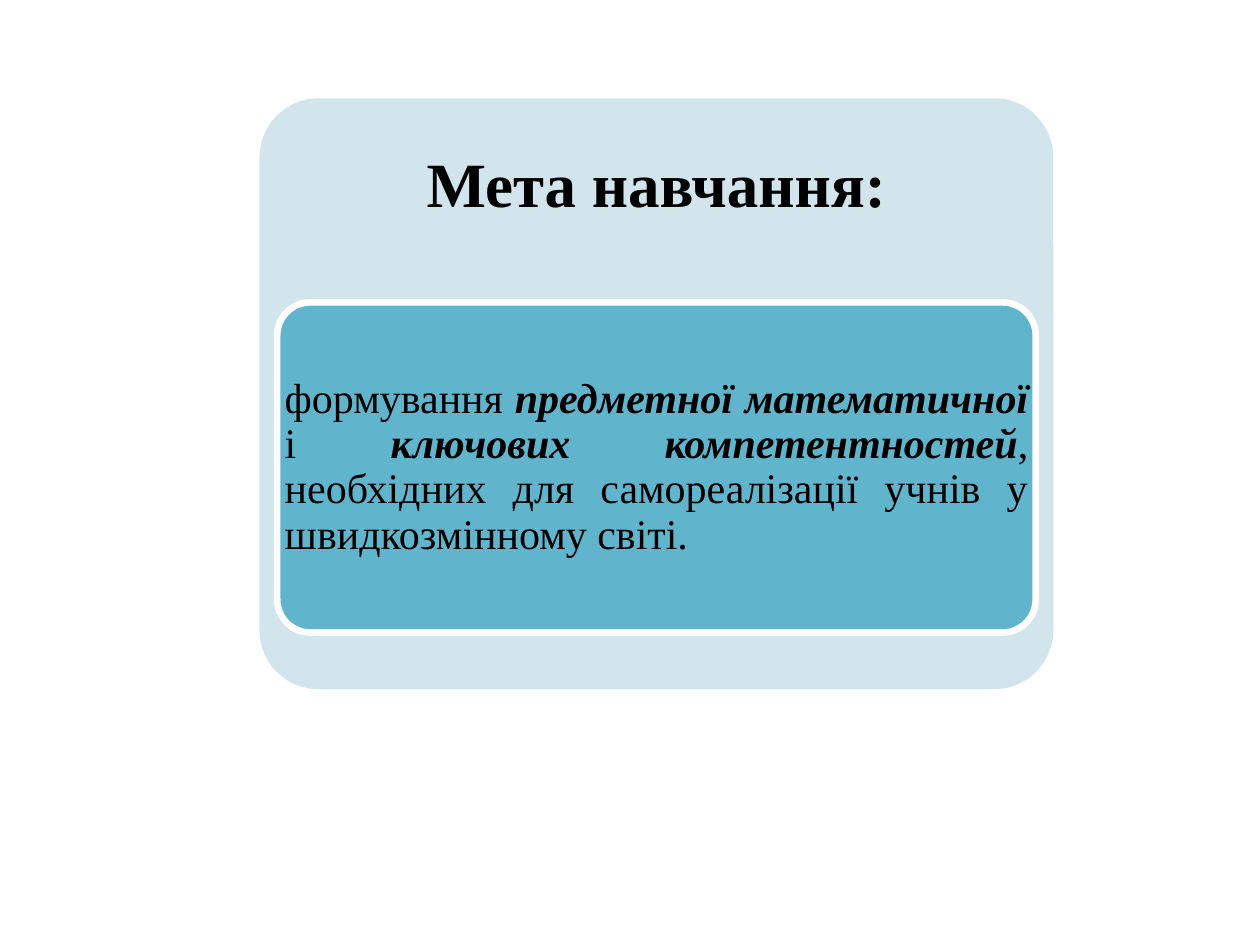
from pptx import Presentation
from pptx.dml.color import RGBColor
from pptx.enum.shapes import MSO_SHAPE
from pptx.enum.text import MSO_ANCHOR, PP_ALIGN
from pptx.util import Inches, Pt

PALE_BLUE = RGBColor(0xD2, 0xE5, 0xEC)
TEAL = RGBColor(0x60, 0xB5, 0xCC)
WHITE = RGBColor(0xFF, 0xFF, 0xFF)
BLACK = RGBColor(0, 0, 0)
FONT = "Times New Roman"

# Each run is its text and whether it is bold, italic
HEADING = [("Мета навчання:", True, False)]
GOAL = [
    ("формування ", False, False),
    ("предметної математичної ", True, True),
    ("і ", False, False),
    ("ключових компетентностей", True, True),
    (", необхідних для самореалізації учнів у швидкозмінному світі.", False, False),
]


def add_panel(slide, box, fill, outline=None):
    shape = slide.shapes.add_shape(MSO_SHAPE.ROUNDED_RECTANGLE, *map(Inches, box))
    shape.adjustments[0] = 0.1
    shape.shadow.inherit = False
    shape.fill.solid()
    shape.fill.fore_color.rgb = fill
    if outline is None:
        shape.line.fill.background()
    else:
        shape.line.color.rgb = outline
        shape.line.width = Pt(3.78)


def add_text(slide, box, runs, size, alignment, inset_x, inset_y):
    text_frame = slide.shapes.add_textbox(*map(Inches, box)).text_frame
    text_frame.word_wrap = True
    text_frame.vertical_anchor = MSO_ANCHOR.MIDDLE
    text_frame.margin_left = text_frame.margin_right = Inches(inset_x)
    text_frame.margin_top = text_frame.margin_bottom = Inches(inset_y)
    paragraph = text_frame.paragraphs[0]
    paragraph.alignment = alignment
    paragraph.line_spacing = 0.9
    for text, bold, italic in runs:
        run = paragraph.add_run()
        run.text = text
        run.font.name = FONT
        run.font.size = Pt(size)
        run.font.color.rgb = BLACK
        run.font.bold = bold
        run.font.italic = italic


def add_goal_card(slide, left, top, width, height):
    # Outer panel with its heading in the top 30 percent
    add_panel(slide, (left, top, width, height), PALE_BLUE)
    heading_box = (left, top, width, 0.3 * height)
    add_text(slide, heading_box, HEADING, 36, PP_ALIGN.CENTER, 0.15, 0.15)

    # Inner panel with the goal; the side insets let the first line fit
    margin = 0.14
    goal_box = (left + margin, top + 1.62, width - 2 * margin, 2.62)
    add_panel(slide, goal_box, TEAL, WHITE)
    add_text(slide, goal_box, GOAL, 24, PP_ALIGN.JUSTIFY, 0.06, 0.05)


def main():
    presentation = Presentation()
    presentation.slide_width = Inches(10)
    presentation.slide_height = Inches(7.5)
    slide = presentation.slides.add_slide(presentation.slide_layouts[6])
    add_goal_card(slide, 2.06, 0.78, 6.3, 4.69)
    presentation.save("out.pptx")


if __name__ == "__main__":
    main()
